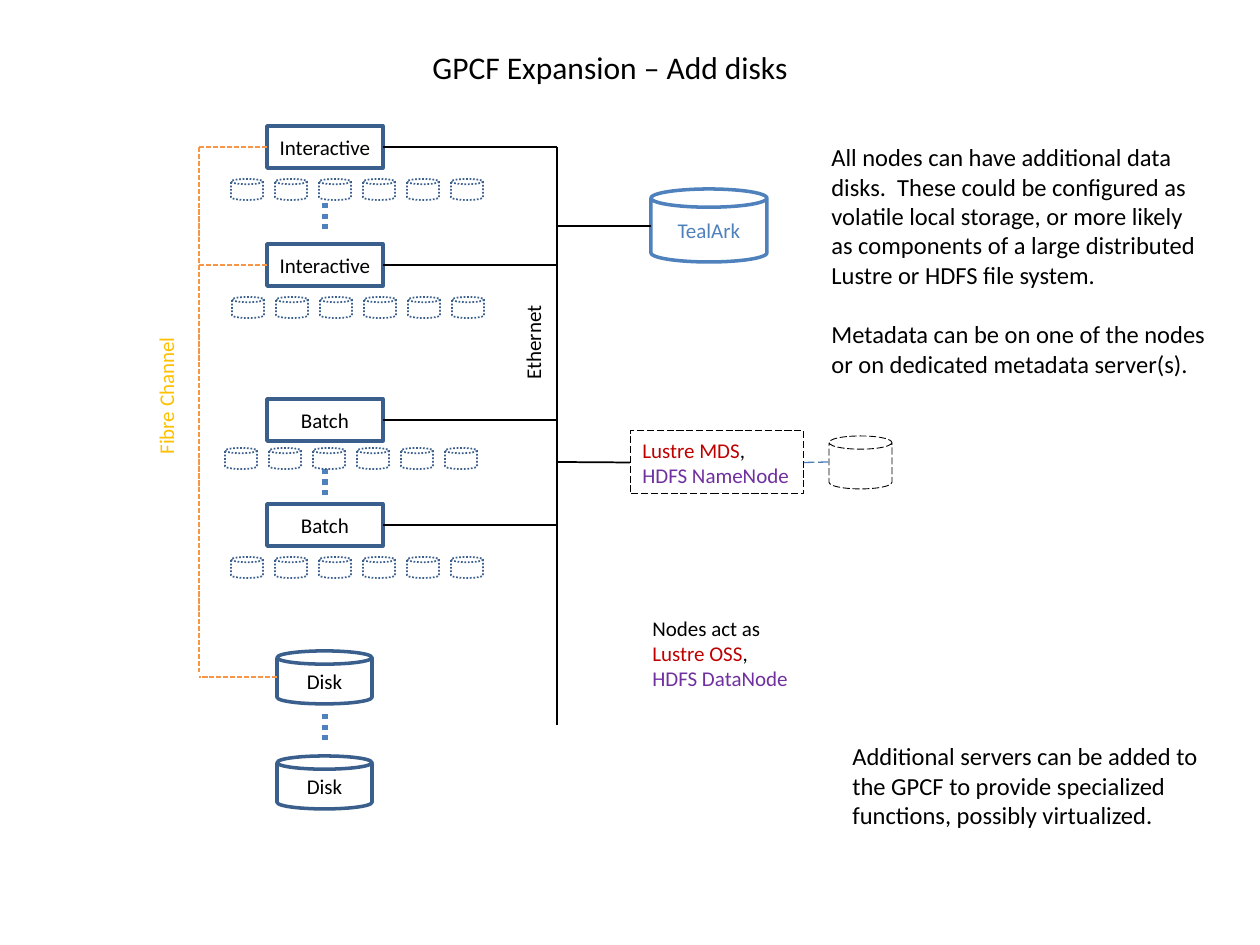
from lxml import etree
from pptx import Presentation
from pptx.dml.color import RGBColor
from pptx.enum.dml import MSO_LINE
from pptx.enum.shapes import MSO_CONNECTOR, MSO_SHAPE
from pptx.enum.text import MSO_ANCHOR, PP_ALIGN
from pptx.oxml.ns import qn
from pptx.util import Emu, Pt

RECT, CAN = MSO_SHAPE.RECTANGLE, MSO_SHAPE.CAN
DOT, DASH, LONG = MSO_LINE.ROUND_DOT, MSO_LINE.SQUARE_DOT, MSO_LINE.LONG_DASH
LEFT, CENTER, MIDDLE = PP_ALIGN.LEFT, PP_ALIGN.CENTER, MSO_ANCHOR.MIDDLE
STRAIGHT = MSO_CONNECTOR.STRAIGHT
SIDE_LEFT, SIDE_RIGHT = 1, 3

BLACK = RGBColor(0x00, 0x00, 0x00)
NAVY = RGBColor(0x3A, 0x5F, 0x8C)
BLUE = RGBColor(0x4F, 0x81, 0xBD)
LINK_BLUE = RGBColor(0x4B, 0x7E, 0xBC)
ORANGE = RGBColor(0xF7, 0x96, 0x46)
GOLD = RGBColor(0xFF, 0xC0, 0x00)
RED = RGBColor(0xC0, 0x00, 0x00)
PURPLE = RGBColor(0x70, 0x30, 0xA0)

PX = 914400 / 126
BUS_X, FIBRE_X, DOTS_X = 557, 199, 325
NODE_X, NODE_W, NODE_H = 267, 116, 42

prs = Presentation()
prs.slide_width, prs.slide_height = Emu(round(1260 * PX)), Emu(round(945 * PX))
s = prs.slides.add_slide(prs.slide_layouts[6])


def write(sp, lines, size=12, color=BLACK, align=LEFT, gap_before=None):
    tf = sp.text_frame
    tf.word_wrap = False
    for i, line in enumerate(lines):
        p = tf.paragraphs[0] if i == 0 else tf.add_paragraph()
        p.alignment = align
        if i == gap_before:
            p.space_before = Pt(size * 1.22)
        for text, run_color in [(line, color)] if isinstance(line, str) else line:
            r = p.add_run()
            r.text = text
            r.font.name = "Calibri"
            r.font.size = Pt(size)
            r.font.color.rgb = run_color


def connect(x1, y1, x2, y2, color=BLACK, width=1, dash=None):
    c = s.shapes.add_connector(STRAIGHT, *[Emu(round(v * PX)) for v in (x1, y1, x2, y2)])
    c.line.color.rgb = color
    c.line.width = Pt(width)
    if dash:
        c.line.dash_style = dash
    etree.SubElement(c.element.spPr, qn("a:effectLst"))
    return c


connect(BUS_X, 147, BUS_X, 725)
connect(FIBRE_X, 147, FIBRE_X, 672, ORANGE, 1, DASH)
for y in (203, 469, 714):
    connect(DOTS_X, y, DOTS_X, y + 31, BLUE, 3, DOT)

mds_lines = [[("Lustre MDS", RED), (",", BLACK)], [("HDFS NameNode", PURPLE)]]
shapes = [
    (RECT, NODE_X, 126, NODE_W, NODE_H, NAVY, 2, None, ["Interactive"], BLACK, CENTER),
    (RECT, NODE_X, 244, NODE_W, NODE_H, NAVY, 2, None, ["Interactive"], BLACK, CENTER),
    (RECT, NODE_X, 399, NODE_W, NODE_H, NAVY, 2, None, ["Batch"], BLACK, CENTER),
    (RECT, NODE_X, 504, NODE_W, NODE_H, NAVY, 2, None, ["Batch"], BLACK, CENTER),
    (RECT, 630, 431, 174, 63, BLACK, 0.5, LONG, mds_lines, BLACK, LEFT),
    (CAN, 829, 436, 63, 53, BLACK, 0.5, LONG, [], BLACK, CENTER),
    (CAN, 277, 651, 95, 53, NAVY, 2, None, ["Disk"], BLACK, CENTER),
    (CAN, 277, 756, 95, 53, NAVY, 2, None, ["Disk"], BLACK, CENTER),
    (CAN, 651, 189, 116, 73, BLUE, 2, None, ["TealArk"], BLUE, CENTER),
]
for x, y in ((231, 179), (232, 297), (225, 448), (231, 557)):
    for i in range(6):
        shapes.append((CAN, x + 44 * i, y, 32, 21, NAVY, 1, DOT, [], BLACK, CENTER))

drawn = []
for kind, x, y, w, h, line_color, width, dash, lines, color, align in shapes:
    sp = s.shapes.add_shape(kind, *[Emu(round(v * PX)) for v in (x, y, w, h)])
    sp.shadow.inherit = False
    sp.fill.background()
    sp.line.color.rgb = line_color
    sp.line.width = Pt(width)
    if dash:
        sp.line.dash_style = dash
    sp.text_frame.vertical_anchor = MIDDLE
    write(sp, lines, color=color, align=align)
    drawn.append(sp)

nodes, mds = drawn[:4], drawn[4]
for node, y in zip(nodes, (147, 265, 420, 525)):
    connect(NODE_X + NODE_W, y, BUS_X, y, BLACK, 1.5).begin_connect(node, SIDE_RIGHT)
for node, y in zip(nodes[:2], (147, 265)):
    connect(NODE_X, y, FIBRE_X, y, ORANGE, 1, DASH).begin_connect(node, SIDE_LEFT)
connect(277, 677, FIBRE_X, 677, ORANGE, 1, DASH)
connect(651, 226, BUS_X, 226)
connect(630, 462, BUS_X, 462).begin_connect(mds, SIDE_LEFT)
connect(804, 462, 829, 462, LINK_BLUE, 0.75, LONG).begin_connect(mds, SIDE_RIGHT)

role_lines = ["Nodes act as", [("Lustre OSS", RED), (",", BLACK)], [("HDFS DataNode", PURPLE)]]
disk_lines = [
    "All nodes can have additional data",
    "disks.  These could be configured as",
    "volatile local storage, or more likely",
    "as components of a large distributed",
    "Lustre or HDFS file system.",
    "Metadata can be on one of the nodes",
    "or on dedicated metadata server(s).",
]
server_lines = [
    "Additional servers can be added to",
    "the GPCF to provide specialized",
    "functions, possibly virtualized.",
]
for x, y, w, h, lines, size, color, gap_before, vert in (
    (420, 42, 384, 50, ["GPCF Expansion – Add disks"], 18, BLACK, None, None),
    (819, 136, 403, 251, disk_lines, 14, BLACK, 5, None),
    (840, 735, 374, 102, server_lines, 14, BLACK, None, None),
    (640, 609, 163, 89, role_lines, 12, BLACK, None, None),
    (514, 305, 50, 87, ["Ethernet"], 12, BLACK, None, "vert270"),
    (147, 336, 50, 131, ["Fibre Channel"], 12, GOLD, None, "vert270"),
):
    sp = s.shapes.add_textbox(*[Emu(round(v * PX)) for v in (x, y, w, h)])
    write(sp, lines, size=size, color=color, gap_before=gap_before)
    if vert:
        sp.element.txBody.find(qn("a:bodyPr")).set("vert", vert)

prs.save("out.pptx")
